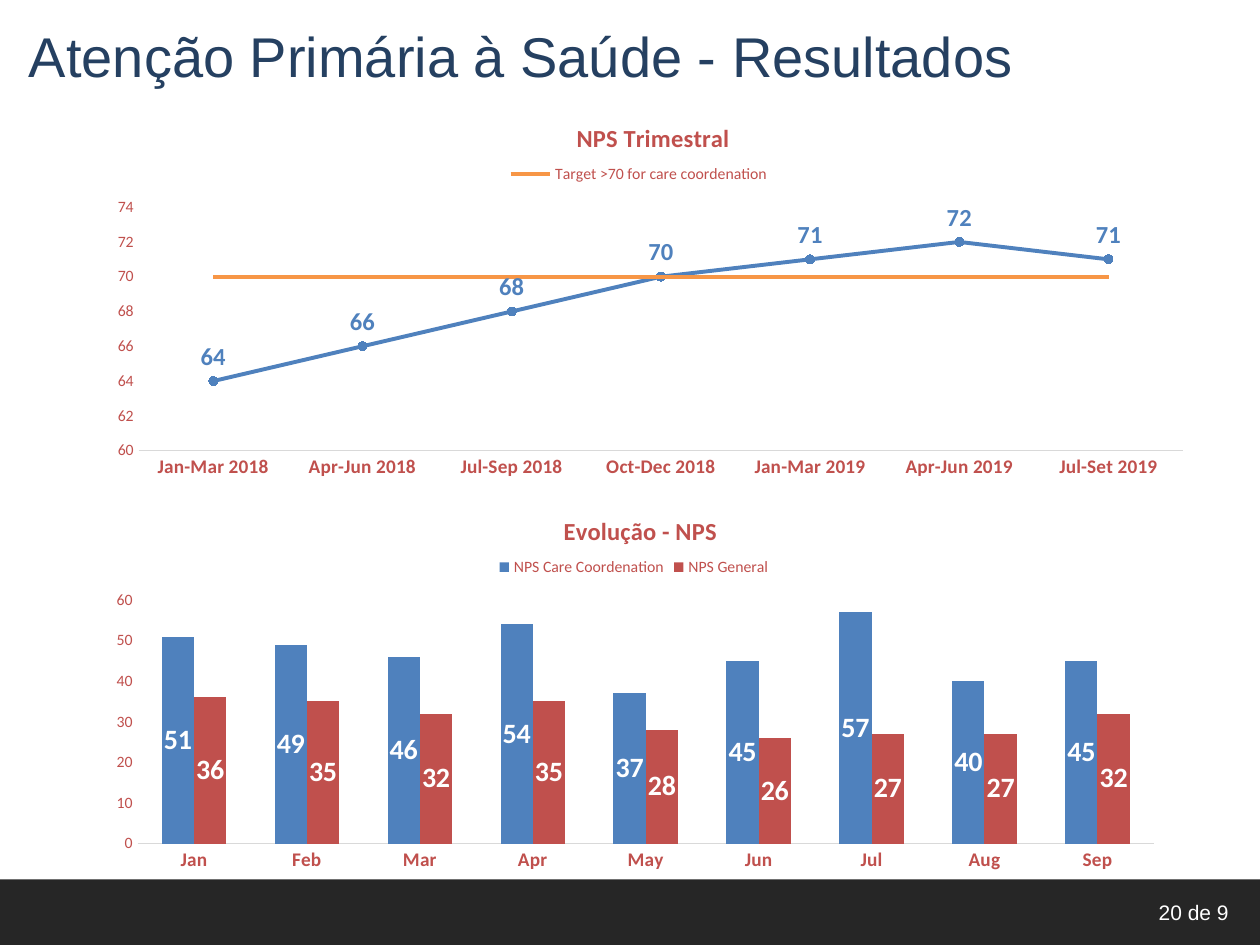
from lxml import etree
from pptx import Presentation
from pptx.chart.data import CategoryChartData
from pptx.dml.color import RGBColor
from pptx.enum.chart import (XL_CHART_TYPE, XL_LABEL_POSITION,
                             XL_LEGEND_POSITION, XL_MARKER_STYLE, XL_TICK_MARK)
from pptx.enum.shapes import MSO_SHAPE
from pptx.enum.text import MSO_ANCHOR, PP_ALIGN
from pptx.oxml import parse_xml
from pptx.oxml.ns import nsdecls, qn
from pptx.util import Cm, Pt

BLUE = RGBColor(0x4F, 0x81, 0xBD)
RED = RGBColor(0xC0, 0x50, 0x4D)
ORANGE = RGBColor(0xF7, 0x96, 0x46)
NAVY = RGBColor(0x25, 0x40, 0x61)
DARK = RGBColor(0x26, 0x26, 0x26)
GRAY = RGBColor(0xD9, 0xD9, 0xD9)
WHITE = RGBColor(0xFF, 0xFF, 0xFF)

COLUMN = XL_CHART_TYPE.COLUMN_CLUSTERED
LINE = XL_CHART_TYPE.LINE_MARKERS
CENTER = XL_LABEL_POSITION.CENTER
ABOVE = XL_LABEL_POSITION.ABOVE
TOP = XL_LEGEND_POSITION.TOP
CIRCLE = XL_MARKER_STYLE.CIRCLE
BLANK = XL_MARKER_STYLE.NONE
NO_TICK = XL_TICK_MARK.NONE
RECT = MSO_SHAPE.RECTANGLE
MIDDLE = MSO_ANCHOR.MIDDLE
LEFT, RIGHT = PP_ALIGN.LEFT, PP_ALIGN.RIGHT

QUARTERS = ["Jan-Mar 2018", "Apr-Jun 2018", "Jul-Sep 2018", "Oct-Dec 2018",
            "Jan-Mar 2019", "Apr-Jun 2019", "Jul-Set 2019"]
MONTHS = ["Jan", "Feb", "Mar", "Apr", "May", "Jun", "Jul", "Aug", "Sep"]


def style(font, size, color, bold=False, name="Calibri"):
    font.name, font.size, font.bold = name, Pt(size), bold
    font.color.rgb = color


def write(frame, text, size, color, align):
    frame.word_wrap = True
    frame.vertical_anchor = MIDDLE
    para = frame.paragraphs[0]
    para.alignment = align
    run = para.add_run()
    run.text = text
    style(run.font, size, color, name="Arial")


def place(shape, box):
    shape.left, shape.top, shape.width, shape.height = (Cm(n) for n in box)


def set_layout(node, after, inner=False, **parts):
    """Fix a chart part at fractions of the chart area."""
    for old in node.findall(qn("c:layout")):
        node.remove(old)
    layout = parse_xml(f"<c:layout {nsdecls('c')}><c:manualLayout/></c:layout>")
    tags = [("layoutTarget", "inner")] if inner else []
    tags += [("xMode", "edge"), ("yMode", "edge"), *parts.items()]
    for tag, val in tags:
        etree.SubElement(layout[0], qn(f"c:{tag}")).set("val", str(val))
    if after is None:
        node.insert(0, layout)
    else:
        node.find(qn(after)).addnext(layout)


def add_chart(slide, kind, box, title, cats, series, scale):
    data = CategoryChartData(number_format="0")
    data.categories = cats
    for name, vals in series:
        data.add_series(name, vals)
    chart = slide.shapes.add_chart(kind, *(Cm(n) for n in box), data).chart
    style(chart.font, 10, RED)

    # Title and legend
    run = chart.chart_title.text_frame.paragraphs[0].add_run()
    run.text = title
    style(run.font, 14, RED, True)
    chart.chart_title.include_in_layout = False
    chart.has_legend = True
    chart.legend.position = TOP
    chart.legend.include_in_layout = False
    style(chart.legend.font, 9, RED)

    # Axes
    cat, val = chart.category_axis, chart.value_axis
    for axis in (cat, val):
        axis.major_tick_mark = axis.minor_tick_mark = NO_TICK
        axis.has_major_gridlines = False
    style(cat.tick_labels.font, 11, RED, True)
    cat.format.line.color.rgb = GRAY
    cat.format.line.width = Pt(0.75)
    style(val.tick_labels.font, 9, RED)
    val.format.line.fill.background()
    val.tick_labels.number_format = "0"
    val.tick_labels.number_format_is_linked = False
    val.minimum_scale, val.maximum_scale, val.major_unit = scale

    # Positions of the parts
    root = chart.element.chart
    set_layout(root.find(qn("c:title")), "c:tx", x=0.43, y=0.05)
    set_layout(root.find(qn("c:legend")), "c:legendPos", x=0.37, y=0.16)
    set_layout(root.plotArea, None, True, x=0.04, y=0.28, w=0.94, h=0.62)
    return chart


def add_labels(series, size, color, spot):
    labels = series.data_labels
    labels.show_value = True
    labels.number_format = "0"
    labels.number_format_is_linked = False
    labels.position = spot
    style(labels.font, size, color, True)


def add_trend(slide):
    chart = add_chart(
        slide, LINE, (1.9, 1.96, 22.4, 7.92), "NPS Trimestral", QUARTERS,
        [("Series 1", [64, 66, 68, 70, 71, 72, 71]),
         ("Target >70 for care coordenation", [70] * len(QUARTERS))],
        (60, 74, 2))
    score, target = chart.plots[0].series
    for line, color in ((score, BLUE), (target, ORANGE)):
        line.smooth = False
        line.format.line.color.rgb = color
        line.format.line.width = Pt(2.25)
    score.marker.style, score.marker.size = CIRCLE, 5
    score.marker.format.fill.solid()
    score.marker.format.fill.fore_color.rgb = BLUE
    score.marker.format.line.color.rgb = BLUE
    target.marker.style = BLANK
    add_labels(score, 14, BLUE, ABOVE)

    # Only the target is named in the legend
    entry = parse_xml(f'<c:legendEntry {nsdecls("c")}><c:idx val="0"/>'
                      '<c:delete val="1"/></c:legendEntry>')
    chart.element.chart.find(qn("c:legend")).insert(1, entry)


def add_bars(slide):
    chart = add_chart(
        slide, COLUMN, (1.9, 9.88, 21.8, 7.92), "Evolução - NPS", MONTHS,
        [("NPS Care Coordenation", [51, 49, 46, 54, 37, 45, 57, 40, 45]),
         ("NPS General", [36, 35, 32, 35, 28, 26, 27, 27, 32])],
        (0, 60, 10))
    plot = chart.plots[0]
    plot.gap_width, plot.overlap = 150, 0
    plot.vary_by_categories = False
    for bars, color in zip(plot.series, (BLUE, RED)):
        bars.format.fill.solid()
        bars.format.fill.fore_color.rgb = color
        add_labels(bars, 16, WHITE, CENTER)


def add_footer(slide):
    band = slide.shapes.add_shape(RECT, 0, Cm(17.73), Cm(25.4), Cm(1.32))
    band.shadow.inherit = False
    band.fill.solid()
    band.fill.fore_color.rgb = DARK
    band.line.fill.background()
    box = slide.shapes.add_textbox(Cm(16.3), Cm(18), Cm(8.72), Cm(0.77))
    write(box.text_frame, "20 de 9", 12, WHITE, RIGHT)


def main():
    deck = Presentation()
    deck.slide_width, deck.slide_height = Cm(25.4), Cm(19.05)
    slide = deck.slides.add_slide(deck.slide_layouts[5])
    add_footer(slide)
    title = slide.shapes.title
    place(title, (0.33, 0.3, 24.4, 1.63))
    write(title.text_frame, "Atenção Primária à Saúde - Resultados",
          32, NAVY, LEFT)
    add_bars(slide)
    add_trend(slide)
    deck.save("out.pptx")


if __name__ == "__main__":
    main()
